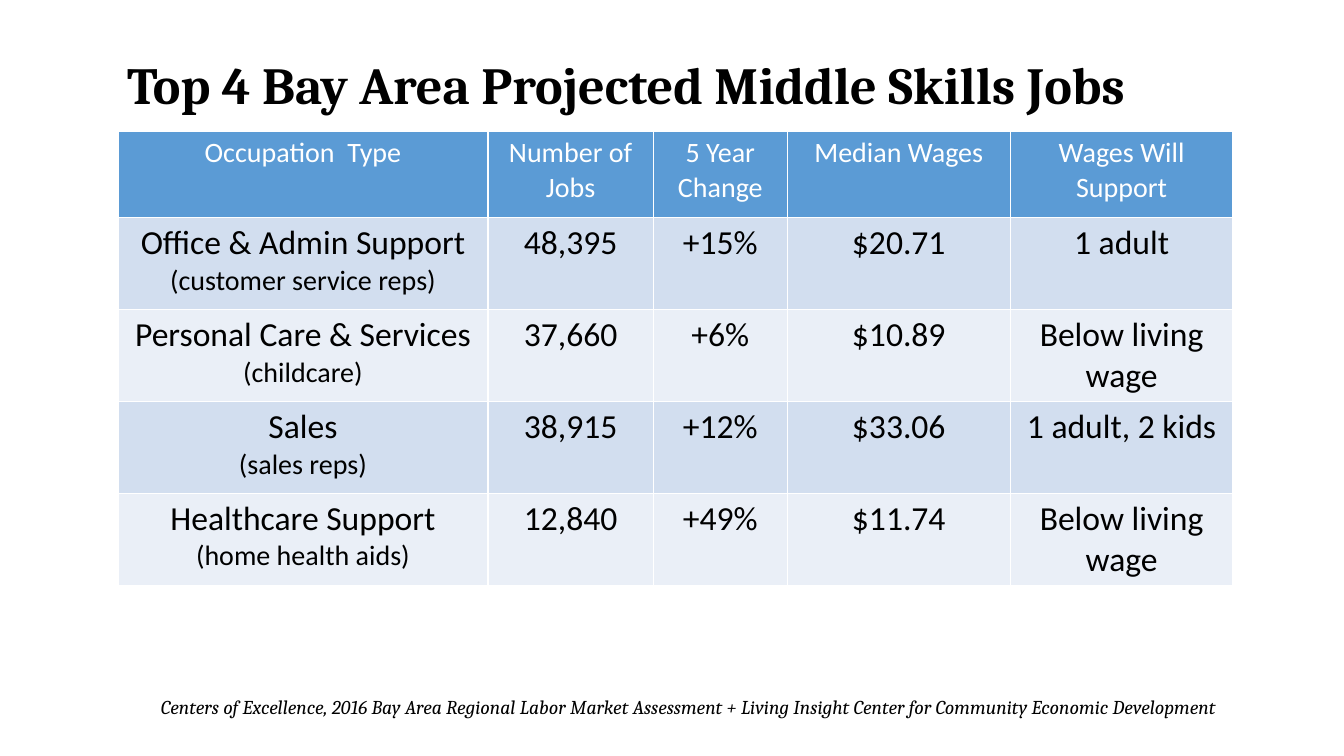
from dataclasses import dataclass

from pptx import Presentation
from pptx.dml.color import RGBColor
from pptx.enum.text import MSO_ANCHOR, MSO_AUTO_SIZE, PP_ALIGN
from pptx.slide import Slide
from pptx.table import _Cell
from pptx.text.text import _Paragraph
from pptx.util import Inches, Pt


@dataclass(frozen=True)
class Theme:
    heading_font: str = "Cambria"
    body_font: str = "Calibri"
    ink: str = "000000"
    header_ink: str = "FFFFFF"
    header_fill: str = "5B9BD5"
    band_fills: tuple[str, str] = ("D2DEEF", "EAEFF7")
    title_size: float = 37.2
    value_size: float = 24
    label_size: float = 20
    source_size: float = 14


@dataclass(frozen=True)
class Occupation:
    name: str
    example: str
    jobs: str
    change: str
    wage: str
    support: str


@dataclass(frozen=True)
class Line:
    text: str
    size: float
    color: str


THEME = Theme()
TITLE = "Top 4 Bay Area Projected Middle Skills Jobs"
SOURCE = (
    "Centers of Excellence, 2016 Bay Area Regional Labor Market Assessment"
    " + Living Insight Center for Community Economic Development"
)
HEADERS = ("Occupation  Type", "Number of Jobs", "5 Year Change", "Median Wages", "Wages Will Support")
OCCUPATIONS = (
    Occupation("Office & Admin Support", "(customer service reps)", "48,395", "+15%", "$20.71", "1 adult"),
    Occupation("Personal Care & Services", "(childcare)", "37,660", "+6%", "$10.89", "Below living wage"),
    Occupation("Sales", "(sales reps)", "38,915", "+12%", "$33.06", "1 adult, 2 kids"),
    Occupation("Healthcare Support", "(home health aids)", "12,840", "+49%", "$11.74", "Below living wage"),
)
COLUMN_WIDTHS = (3.67, 1.64, 1.33, 2.21, 2.21)
HEADER_HEIGHT = 0.86
ROW_HEIGHT = 0.91


def add_text(
    paragraph: _Paragraph, line: Line, font_name: str, bold: bool = False, italic: bool = False
) -> None:
    run = paragraph.add_run()
    run.text = line.text
    run.font.name = font_name
    run.font.size = Pt(line.size)
    run.font.color.rgb = RGBColor.from_string(line.color)
    run.font.bold = bold
    run.font.italic = italic


def fill_cell(cell: _Cell, lines: list[Line], fill: str) -> None:
    cell.fill.solid()
    cell.fill.fore_color.rgb = RGBColor.from_string(fill)
    text_frame = cell.text_frame
    for index, line in enumerate(lines):
        paragraph = text_frame.add_paragraph() if index else text_frame.paragraphs[0]
        paragraph.alignment = PP_ALIGN.CENTER
        add_text(paragraph, line, THEME.body_font)


def add_title(slide: Slide) -> None:
    title = slide.shapes.title
    title.left, title.top = Inches(1.16), Inches(0.64)
    title.width, title.height = Inches(11.22), Inches(0.97)
    text_frame = title.text_frame
    text_frame.auto_size = MSO_AUTO_SIZE.NONE
    text_frame.vertical_anchor = MSO_ANCHOR.TOP
    paragraph = text_frame.paragraphs[0]
    paragraph.alignment = PP_ALIGN.LEFT
    paragraph.line_spacing = 0.7
    paragraph.space_before = Pt(10)
    add_text(paragraph, Line(TITLE, THEME.title_size, THEME.ink), THEME.heading_font, bold=True)


def add_jobs_table(slide: Slide) -> None:
    table = slide.shapes.add_table(
        len(OCCUPATIONS) + 1,
        len(HEADERS),
        Inches(1.17),
        Inches(1.3),
        Inches(sum(COLUMN_WIDTHS)),
        Inches(HEADER_HEIGHT + ROW_HEIGHT * len(OCCUPATIONS)),
    ).table
    for column, width in zip(table.columns, COLUMN_WIDTHS):
        column.width = Inches(width)
    for index, row in enumerate(table.rows):
        row.height = Inches(ROW_HEIGHT if index else HEADER_HEIGHT)

    for cell, header in zip(table.rows[0].cells, HEADERS):
        fill_cell(cell, [Line(header, THEME.label_size, THEME.header_ink)], THEME.header_fill)
    for index, job in enumerate(OCCUPATIONS):
        values = (job.name, job.jobs, job.change, job.wage, job.support)
        contents = [[Line(value, THEME.value_size, THEME.ink)] for value in values]
        contents[0].append(Line(job.example, THEME.label_size, THEME.ink))
        for cell, lines in zip(table.rows[index + 1].cells, contents):
            fill_cell(cell, lines, THEME.band_fills[index % 2])


def add_source(slide: Slide) -> None:
    text_box = slide.shapes.add_textbox(Inches(0.15), Inches(6.84), Inches(12.02), Inches(0.34))
    text_frame = text_box.text_frame
    text_frame.word_wrap = True
    paragraph = text_frame.paragraphs[0]
    paragraph.alignment = PP_ALIGN.RIGHT
    add_text(paragraph, Line(SOURCE, THEME.source_size, THEME.ink), THEME.heading_font, italic=True)


def main() -> None:
    presentation = Presentation()
    presentation.slide_width = Inches(13.33)
    presentation.slide_height = Inches(7.5)
    slide = presentation.slides.add_slide(presentation.slide_layouts[5])
    add_title(slide)
    add_jobs_table(slide)
    add_source(slide)
    presentation.save("out.pptx")


if __name__ == "__main__":
    main()
